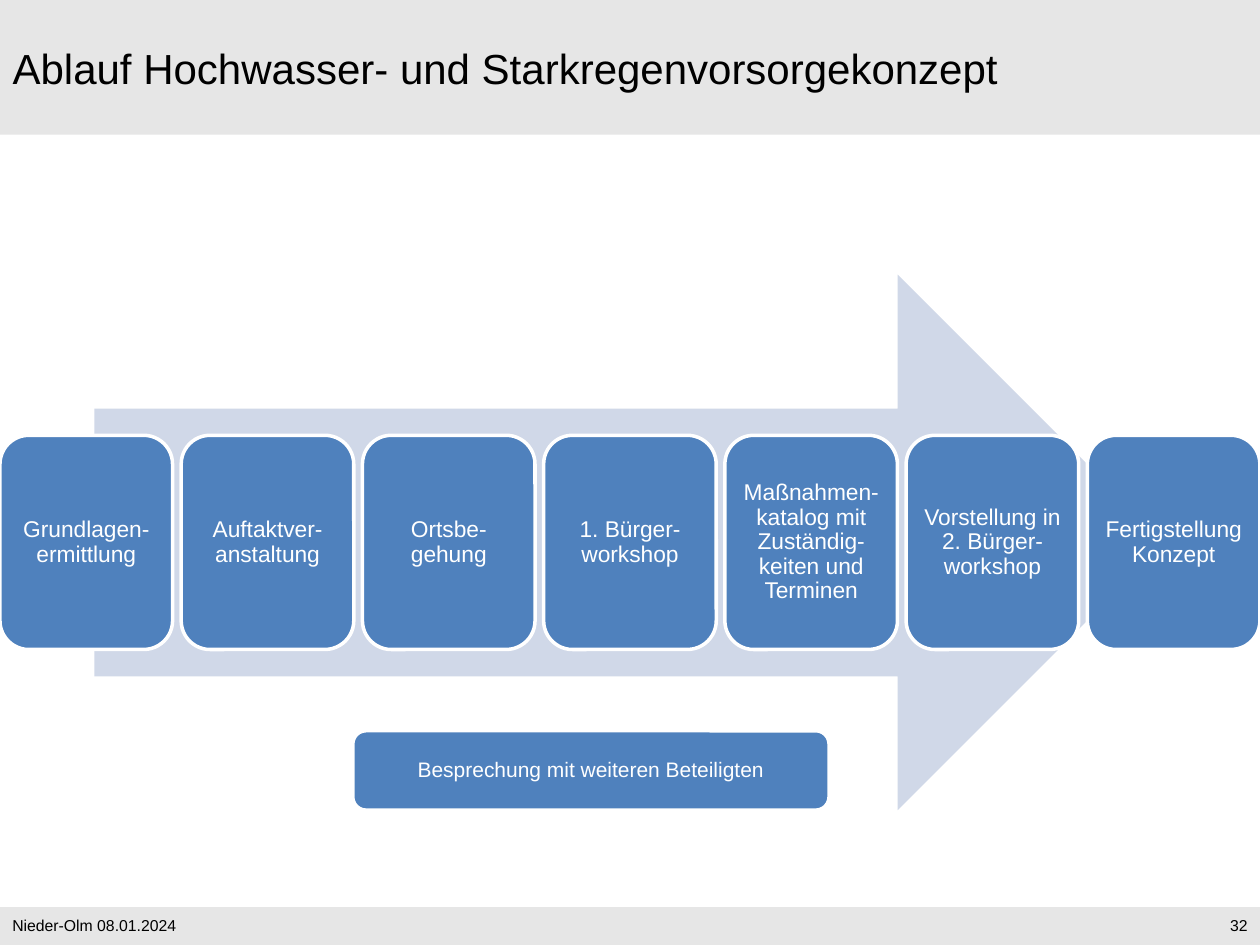
from collections import namedtuple

from pptx import Presentation
from pptx.dml.color import RGBColor
from pptx.enum.shapes import MSO_SHAPE as Shape
from pptx.enum.text import MSO_ANCHOR as Anchor, PP_ALIGN as Align
from pptx.util import Inches, Pt

Box = namedtuple("Box", "left top width height")
WIDTH, HEIGHT = 10, 7.5
COLORS = {"band": "E6E6E6", "arrow": "D0D8E8", "step": "4F81BD",
          "light": "FFFFFF", "dark": "000000"}
STEPS = ["Grundlagen-ermittlung", "Auftaktver-anstaltung", "Ortsbe-gehung",
         "1. Bürger-workshop", "Maßnahmen-katalog mit Zuständig-keiten und Terminen",
         "Vorstellung in 2. Bürger-workshop", "Fertigstellung Konzept"]


def color(name):
    """Return the named colour of the palette."""
    return RGBColor.from_string(COLORS[name])


def inches(box):
    """Convert a box to lengths."""
    return [Inches(value) for value in box]


def write(shape, text, size, ink="dark", align=Align.LEFT, margin=0.1, spacing=1.0):
    """Put one formatted paragraph into a shape."""
    frame = shape.text_frame
    frame.text = text
    para = frame.paragraphs[0]
    formats = [
        (frame, {"word_wrap": True, "vertical_anchor": Anchor.MIDDLE,
                 "margin_left": Inches(margin), "margin_right": Inches(margin),
                 "margin_top": Inches(0.05), "margin_bottom": Inches(0.05)}),
        (para, {"alignment": align, "line_spacing": spacing}),
        (para.font, {"name": "Arial", "size": Pt(size)}),
    ]
    for target, values in formats:
        for name, value in values.items():
            setattr(target, name, value)
    para.font.color.rgb = color(ink)


def add_block(page, kind, box, fill, outlined=False):
    """Add a flat filled shape, with a white outline if wanted."""
    shape = page.shapes.add_shape(kind, *inches(box))
    shape.shadow.inherit = False
    shape.fill.solid()
    shape.fill.fore_color.rgb = color(fill)
    if outlined:
        shape.line.color.rgb = color("light")
        shape.line.width = Pt(2)
    else:
        shape.line.fill.background()
    return shape


def add_step(page, box, text, size):
    """Add a rounded box with centred white text."""
    shape = add_block(page, Shape.ROUNDED_RECTANGLE, box, "step", outlined=True)
    write(shape, text, size, "light", Align.CENTER, 0.05, 0.9)


def add_header(page, box, text):
    """Add the title on its grey band."""
    band = add_block(page, Shape.RECTANGLE, box, "band")
    title = page.shapes.title
    title.left, title.top, title.width, title.height = inches(
        box._replace(width=box.width * 0.823))
    write(title, text, 24)
    band._element.addnext(title._element)


def add_footer(page, box, label, number):
    """Add the grey footer band with place, date and page number."""
    add_block(page, Shape.RECTANGLE, box, "band")
    split = box.width * 0.75
    cells = [(label, box.left, split, Align.LEFT),
             (number, box.left + split, box.width - split, Align.RIGHT)]
    for text, left, width, align in cells:
        cell = Box(left, box.top + 0.02, width, box.height * 0.8)
        write(page.shapes.add_textbox(*inches(cell)), text, 9, align=align)


def add_process(page, box, steps):
    """Add the arrow and an even row of steps across its middle."""
    inset = box.width * 0.075
    add_block(page, Shape.RIGHT_ARROW,
              box._replace(left=box.left + inset, width=box.width - 2 * inset), "arrow")
    step_width, step_height = 1.37, box.height * 0.4
    pitch = (box.width - step_width) / (len(steps) - 1)
    top = box.top + (box.height - step_height) / 2
    for column, text in enumerate(steps):
        add_step(page, Box(box.left + column * pitch, top, step_width, step_height), text, 13)


def main():
    """Build and save the deck."""
    deck = Presentation()
    deck.slide_width, deck.slide_height = Inches(WIDTH), Inches(HEIGHT)
    page = deck.slides.add_slide(deck.slide_layouts[5])
    add_header(page, Box(0, 0, WIDTH, 1.07), "Ablauf Hochwasser- und Starkregenvorsorgekonzept")
    add_process(page, Box(0, 2.18, WIDTH, 4.25), STEPS)
    add_footer(page, Box(0, HEIGHT * 0.96, WIDTH, HEIGHT * 0.04), "Nieder-Olm 08.01.2024", "32")
    add_step(page, Box(2.8, 5.8, 3.78, 0.63), "Besprechung mit weiteren Beteiligten", 12)
    deck.save("out.pptx")


if __name__ == "__main__":
    main()
